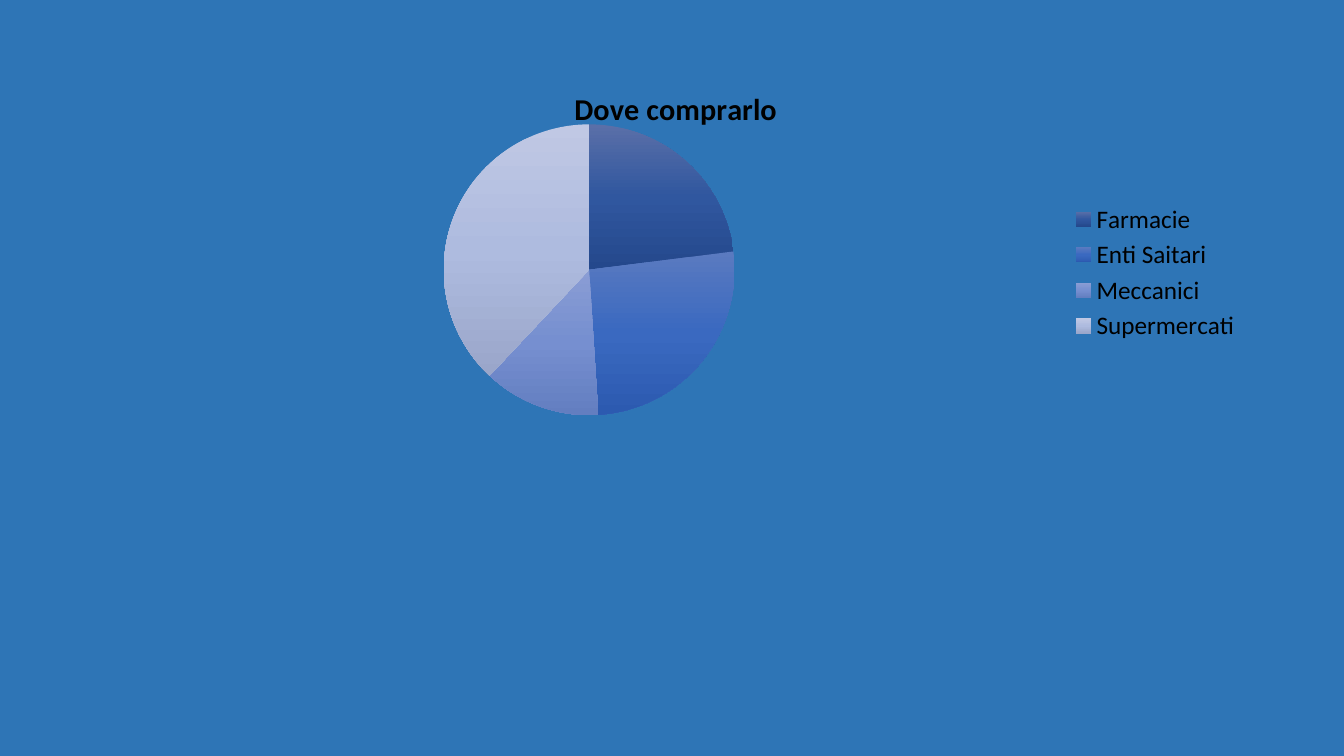
from copy import deepcopy

from lxml.etree import SubElement
from pptx import Presentation
from pptx.chart.data import CategoryChartData
from pptx.dml.color import RGBColor
from pptx.enum.chart import XL_CHART_TYPE, XL_LEGEND_POSITION
from pptx.oxml.ns import qn
from pptx.util import Pt

TITLE = "Dove comprarlo"
# Place, share, gradient from top to bottom
PLACES = [
    ("Farmacie", 23, ("5A6FA8", "30579F", "24488C")),
    ("Enti Saitari", 26, ("5A7AC0", "3A69C0", "2C5AB0")),
    ("Meccanici", 13, ("8A9DD4", "768FD0", "637EC0")),
    ("Supermercati", 38, ("C0C8E4", "AEBBDF", "9AA6CA")),
]
THEME = {
    "background": "2E75B6",
    "text": "000000",
    "font": "Calibri",
    "legend size": 18,
    "title size": 21.6,
}
SLIDE_SIZE = (960, 540)
CHART_BOX = (149.76, 49.68, 743.76, 290.16)
# Fractions of the chart box
PLOT_LAYOUT = {"layoutTarget": "inner", "xMode": "edge", "yMode": "edge",
               "x": 0.013, "y": 0.135, "w": 0.703, "h": 0.716}
TITLE_LAYOUT = {"xMode": "edge", "yMode": "edge", "x": 0.345, "y": 0.03}


def style_font(font, size, bold):
    font.name = THEME["font"]
    font.size = Pt(size)
    font.bold = bold
    font.color.rgb = RGBColor.from_string(THEME["text"])


def set_layout(parent, values, position):
    """Give a chart part a manual layout, as its child at the given position."""
    for existing in parent.findall(qn("c:layout")):
        parent.remove(existing)
    layout = SubElement(parent, qn("c:layout"))
    parent.insert(position, layout)
    manual = SubElement(layout, qn("c:manualLayout"))
    for name, value in values.items():
        SubElement(manual, qn(f"c:{name}")).set("val", str(value))


def fill_gradient(point, chart_element, colors):
    """Fill a slice, the latest one in the chart, evenly from top to bottom."""
    fill = point.format.fill
    fill.gradient()
    fill.gradient_angle = 270
    stop_list = list(chart_element.iter(qn("a:gsLst")))[-1]
    while len(stop_list) < len(colors):
        stop_list.append(deepcopy(stop_list[-1]))
    for index, (stop, color) in enumerate(zip(fill.gradient_stops, colors)):
        stop.position = index / (len(colors) - 1)
        stop.color.rgb = RGBColor.from_string(color)
    point.format.line.fill.background()


def add_pie(slide):
    chart_data = CategoryChartData()
    chart_data.categories = [name for name, _, _ in PLACES]
    chart_data.add_series(TITLE, [share for _, share, _ in PLACES])
    chart = slide.shapes.add_chart(
        XL_CHART_TYPE.PIE, *map(Pt, CHART_BOX), chart_data).chart
    style_font(chart.font, THEME["legend size"], False)

    chart.has_title = True
    title = chart.chart_title
    title.include_in_layout = False
    title.text_frame.text = TITLE
    style_font(title.text_frame.paragraphs[0].runs[0].font,
               THEME["title size"], True)

    chart.has_legend = True
    chart.legend.position = XL_LEGEND_POSITION.RIGHT
    chart.legend.include_in_layout = False

    plot = chart.plots[0]
    plot.vary_by_categories = True
    chart_element = chart.element if hasattr(chart, "element") else chart._chartSpace
    for index, (_, _, colors) in enumerate(PLACES):
        fill_gradient(plot.series[0].points[index], chart_element, colors)

    set_layout(next(chart_element.iter(qn("c:plotArea"))), PLOT_LAYOUT, 0)
    set_layout(next(chart_element.iter(qn("c:title"))), TITLE_LAYOUT, 1)


def main():
    presentation = Presentation()
    presentation.slide_width, presentation.slide_height = map(Pt, SLIDE_SIZE)
    slide = presentation.slides.add_slide(presentation.slide_layouts[6])
    background = slide.background.fill
    background.solid()
    background.fore_color.rgb = RGBColor.from_string(THEME["background"])
    add_pie(slide)
    presentation.save("out.pptx")


if __name__ == "__main__":
    main()
